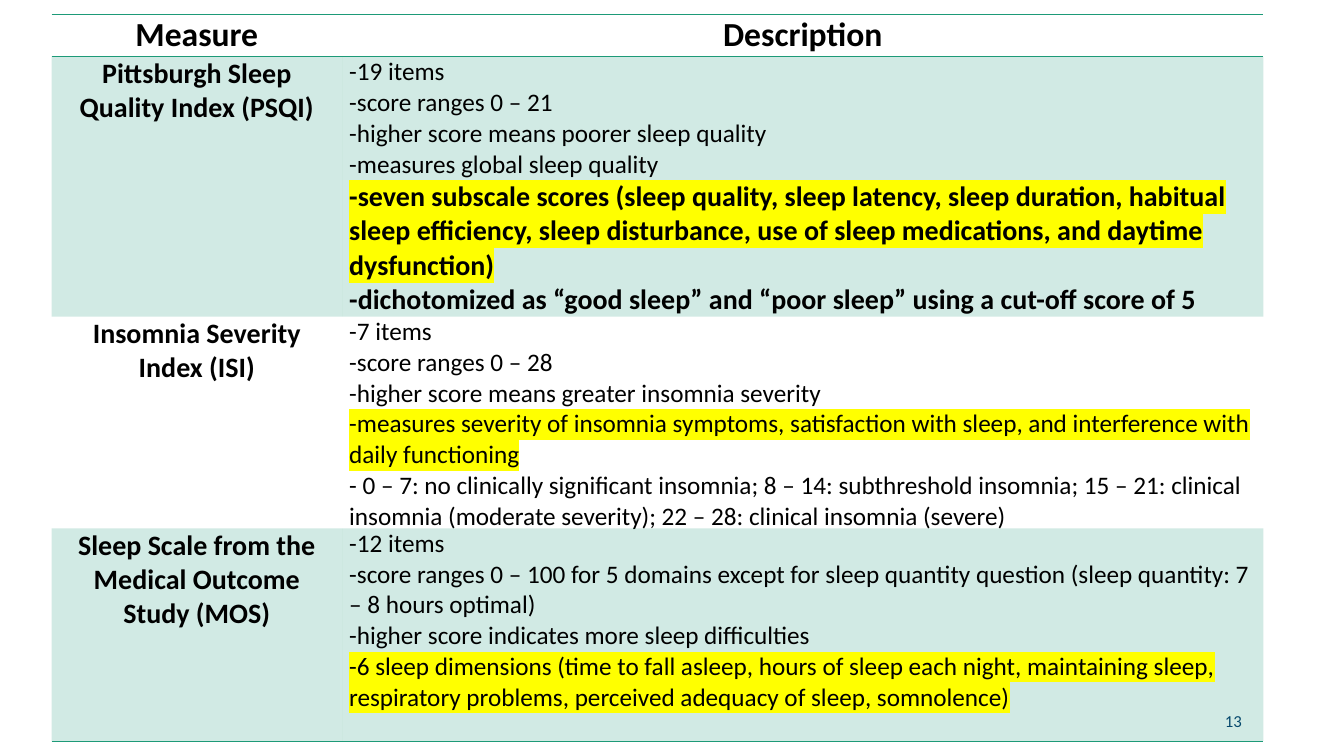
import pptx
import pptx.util
import pptx.dml.color
import pptx.enum.text
import pptx.oxml
import lxml.etree
from dataclasses import dataclass

Cm = pptx.util.Cm
Pt = pptx.util.Pt
Align = pptx.enum.text.PP_ALIGN
NS = "http://schemas.openxmlformats.org/drawingml/2006/main"


@dataclass(frozen=True)
class Theme:
    font: str = "Calibri"
    ink: str = "000000"
    navy: str = "00356B"
    green: str = "1D9A78"
    mark: str = "FFFF00"
    tint: int = 20000
    rule: float = 1
    head: int = 24
    name: int = 20
    body: int = 18
    page: int = 12


THEME = Theme()
BODY = {"size": THEME.body, "bold": False}
BOLD = {"size": THEME.name, "bold": True}
NAME = BOLD | {"align": Align.CENTER}
HEAD = NAME | {"size": THEME.head}
PAGE = {"size": THEME.page, "color": THEME.navy, "align": Align.RIGHT}
MARK = {"mark": THEME.mark}

ROWS = [
    (1.07, [("Measure", HEAD)], [("Description", HEAD)]),
    (6.55, [("Pittsburgh Sleep Quality Index (PSQI)", NAME)], [
        ("-19 items", BODY),
        ("-score ranges 0 – 21", BODY),
        ("-higher score means poorer sleep quality", BODY),
        ("-measures global sleep quality", BODY),
        ("-seven subscale scores (sleep quality, sleep latency, sleep duration, "
         "habitual sleep efficiency, sleep disturbance, use of sleep medications, "
         "and daytime dysfunction)", BOLD | MARK),
        ("-dichotomized as “good sleep” and “poor sleep” using a cut-off score of 5", BOLD),
    ]),
    (4.78, [("Insomnia Severity Index (ISI)", NAME)], [
        ("-7 items", BODY),
        ("-score ranges 0 – 28", BODY),
        ("-higher score means greater insomnia severity", BODY),
        ("-measures severity of insomnia symptoms, satisfaction with sleep, "
         "and interference with daily functioning", BODY | MARK),
        ("- 0 – 7: no clinically significant insomnia; 8 – 14: subthreshold insomnia; "
         "15 – 21: clinical insomnia (moderate severity); "
         "22 – 28: clinical insomnia (severe)", BODY),
    ]),
    (5.36, [("Sleep Scale from the Medical Outcome Study (MOS)", NAME)], [
        ("-12 items", BODY),
        ("-score ranges 0 – 100 for 5 domains except for sleep quantity question "
         "(sleep quantity: 7 – 8 hours optimal)", BODY),
        ("-higher score indicates more sleep difficulties", BODY),
        ("-6 sleep dimensions (time to fall asleep, hours of sleep each night, "
         "maintaining sleep, respiratory problems, perceived adequacy of sleep, "
         "somnolence)", BODY | MARK),
    ]),
]


def paint(fill, color):
    fill.solid()
    fill.fore_color.rgb = pptx.dml.color.RGBColor.from_string(color)


def write(frame, lines):
    for i, (text, look) in enumerate(lines):
        para = frame.add_paragraph() if i else frame.paragraphs[0]
        para.alignment = look.get("align", Align.LEFT)
        run = para.add_run()
        run.text = text
        form = {"name": THEME.font, "size": Pt(look["size"]),
                "bold": look.get("bold", False)}
        for key, value in form.items():
            setattr(run.font, key, value)
        paint(run.font.fill, look.get("color", THEME.ink))
        if "mark" in look:
            tag = pptx.oxml.parse_xml(
                f'<a:highlight xmlns:a="{NS}"><a:srgbClr val="{look["mark"]}"/></a:highlight>')
            run.font.fill.fore_color
            run._r.find(f".//{{{NS}}}solidFill").addnext(tag)


def edge(cell, sides):
    props = cell._tc.get_or_add_tcPr()
    for side in "LRTB":
        line = lxml.etree.SubElement(props, f"{{{NS}}}ln{side}")
        if side in sides:
            line.set("w", str(Pt(THEME.rule)))
            fill = lxml.etree.SubElement(line, f"{{{NS}}}solidFill")
            lxml.etree.SubElement(fill, f"{{{NS}}}srgbClr", val=THEME.green)
        else:
            lxml.etree.SubElement(line, f"{{{NS}}}noFill")


def shade(cell, band):
    if not band:
        cell.fill.background()
        return
    paint(cell.fill, THEME.green)
    tone = cell._tc.tcPr.find(f"{{{NS}}}solidFill/{{{NS}}}srgbClr")
    lxml.etree.SubElement(tone, f"{{{NS}}}alpha", val=str(THEME.tint))


def grid(slide, left, top, width):
    high = sum(row[0] for row in ROWS)
    table = slide.shapes.add_table(
        len(ROWS), 2, Cm(left), Cm(top), Cm(width), Cm(high)).table
    table.first_row = table.horz_banding = False
    first = 7.32
    for col, size in zip(table.columns, (first, width - first)):
        col.width = Cm(size)
    pads = {"margin_left": Cm(0.18), "margin_right": Cm(0.18),
            "margin_top": 0, "margin_bottom": 0}
    sides = {0: "TB", 1: "T", len(ROWS) - 1: "B"}
    for r, (size, *texts) in enumerate(ROWS):
        table.rows[r].height = Cm(size)
        for c, lines in enumerate(texts):
            cell = table.cell(r, c)
            for key, value in pads.items():
                setattr(cell, key, value)
            edge(cell, sides.get(r, ""))
            shade(cell, r % 2)
            write(cell.text_frame, lines)


def number(slide, left, top, width, height):
    frame = slide.shapes.add_textbox(
        Cm(left), Cm(top), Cm(width), Cm(height)).text_frame
    frame.word_wrap = True
    frame.vertical_anchor = pptx.enum.text.MSO_ANCHOR.MIDDLE
    write(frame, [("13", PAGE)])


def main():
    deck = pptx.Presentation()
    deck.slide_width, deck.slide_height = Cm(33.87), Cm(19.05)
    slide = deck.slides.add_slide(deck.slide_layouts[6])
    number(slide, 23.93, 17.65, 7.62, 1.02)
    grid(slide, 1.3, 0.36, 30.54)
    deck.save("out.pptx")


if __name__ == "__main__":
    main()
